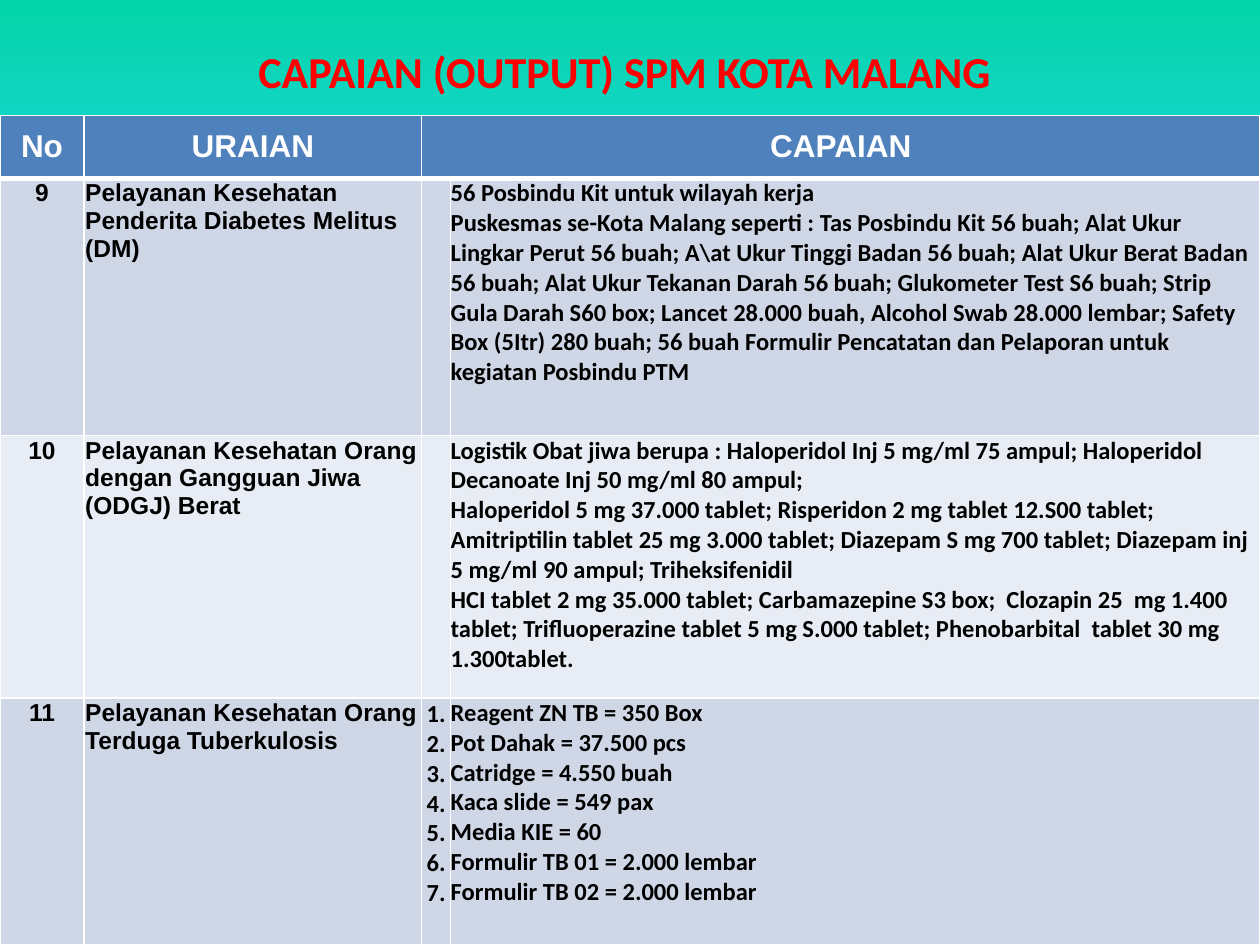
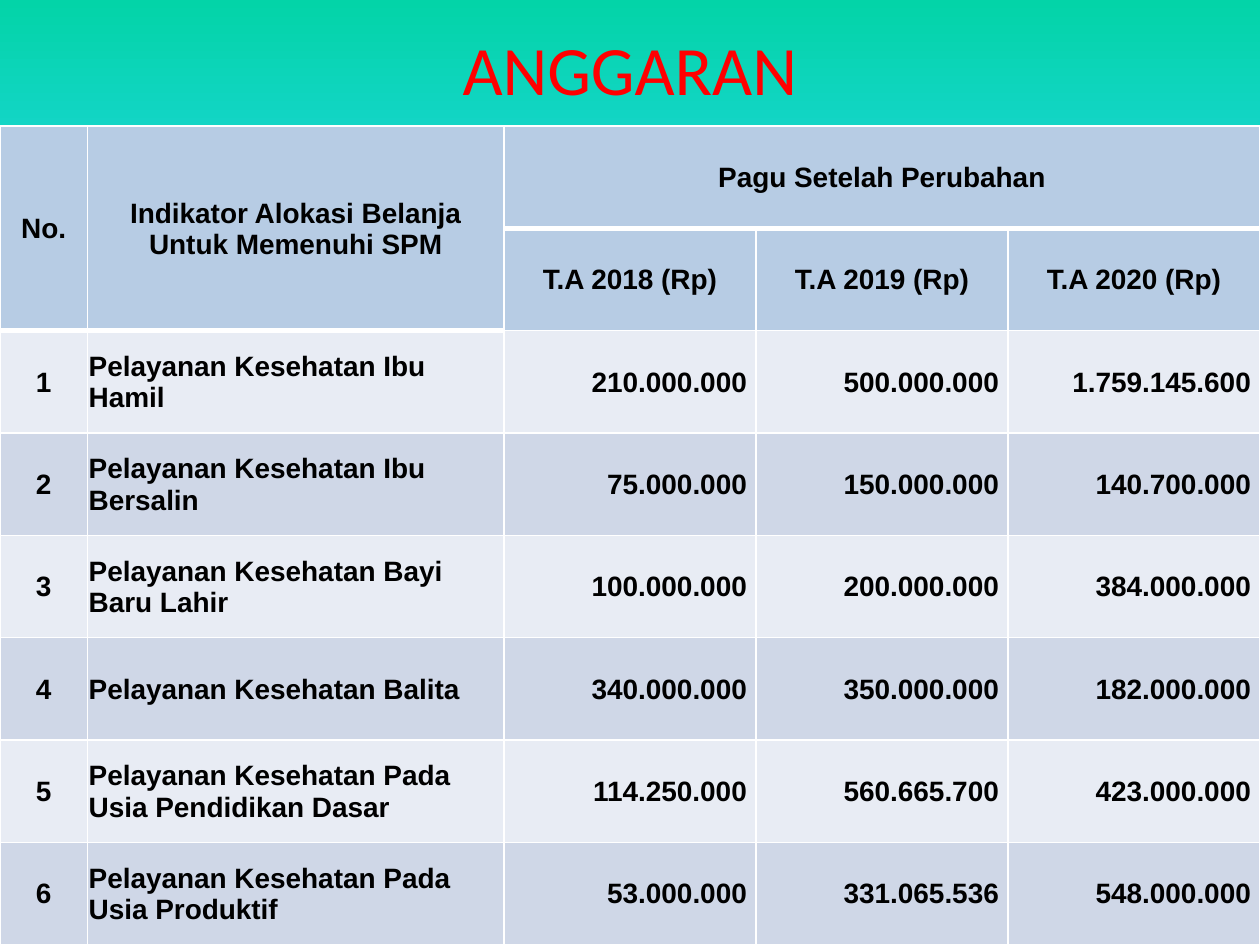
from dataclasses import dataclass

from lxml import etree
from pptx import Presentation
from pptx import util as u
from pptx.dml import color
from pptx.enum import text
from pptx.oxml import ns

Pt = u.Pt
LEFT, CENTER, RIGHT = text.PP_ALIGN.LEFT, text.PP_ALIGN.CENTER, text.PP_ALIGN.RIGHT
TOP, MIDDLE = text.MSO_ANCHOR.TOP, text.MSO_ANCHOR.MIDDLE


@dataclass(frozen=True)
class Theme:
    """Colours, fonts, sizes and line widths shared by the slides."""
    sky: tuple = ((0, "03D4A8"), (25, "21D6E0"), (75, "0087E6"), (100, "005CBF"))
    title: str = "FF0000"
    ink: str = "000000"
    white: str = "FFFFFF"
    head_blue: str = "4F81BD"
    head_pale: str = "B7CCE4"
    band_dark: str = "CFD7E7"
    band_light: str = "E8ECF4"
    sans: str = "Arial"
    body: str = "Calibri"
    output_title: float = 25.2
    budget_title: float = 39.6
    output_head: float = 18
    output_text: float = 14
    budget_text: float = 16
    thin: float = 1
    heavy: float = 3


@dataclass(frozen=True)
class CellStyle:
    """Look of the text in one kind of table cell."""
    size: float
    align: int = LEFT
    anchor: int = TOP
    font: str = Theme.sans
    ink: str = Theme.ink
    insets: tuple = (0.72, 0.72, 0.72, 0)


THEME = Theme()
WIDTH, HEIGHT = 720, 540

OUTPUT_HEAD = CellStyle(THEME.output_head, CENTER, MIDDLE, ink=THEME.white,
                        insets=(7.2, 3.6, 7.2, 3.6))
OUTPUT_NO = CellStyle(THEME.output_text, CENTER)
OUTPUT_NAME = CellStyle(THEME.output_text)
OUTPUT_MARK = CellStyle(THEME.output_text, CENTER, font=THEME.body)
OUTPUT_DETAIL = CellStyle(THEME.output_text, font=THEME.body, insets=(0, 0, 0, 0))
BUDGET_CENTER = CellStyle(THEME.budget_text, CENTER, MIDDLE)
BUDGET_NAME = CellStyle(THEME.budget_text, LEFT, MIDDLE)
BUDGET_AMOUNT = CellStyle(THEME.budget_text, RIGHT, MIDDLE, insets=(0.72, 0.72, 5.2, 0))

SUPPLIES = ["Reagent ZN TB = 350 Box", "Pot Dahak = 37.500 pcs", "Catridge = 4.550 buah",
            "Kaca slide = 549 pax", "Media KIE = 60", "Formulir TB 01 = 2.000 lembar",
            "Formulir TB 02 = 2.000 lembar"]
OUTPUTS = [
    ("9", "Pelayanan Kesehatan Penderita Diabetes Melitus (DM)", [],
     ["56 Posbindu Kit untuk wilayah kerja\n"
      "Puskesmas se-Kota Malang seperti : Tas Posbindu Kit 56 buah; Alat Ukur Lingkar Perut "
      "56 buah; A\\at Ukur Tinggi Badan 56 buah; Alat Ukur Berat Badan 56 buah; Alat Ukur "
      "Tekanan Darah 56 buah; Glukometer Test S6 buah; Strip Gula Darah S60 box; Lancet "
      "28.000 buah, Alcohol Swab 28.000 lembar; Safety Box (5Itr) 280 buah; 56 buah Formulir "
      "Pencatatan dan Pelaporan untuk kegiatan Posbindu PTM"]),
    ("10", "Pelayanan Kesehatan Orang dengan Gangguan Jiwa (ODGJ) Berat", [],
     ["Logistik Obat jiwa berupa : Haloperidol Inj 5 mg/ml 75 ampul; Haloperidol\n"
      "Decanoate Inj 50 mg/ml 80 ampul;\n"
      "Haloperidol 5 mg 37.000 tablet; Risperidon 2 mg tablet 12.S00 tablet; Amitriptilin "
      "tablet 25 mg 3.000 tablet; Diazepam S mg 700 tablet; Diazepam inj 5 mg/ml 90 ampul; "
      "Triheksifenidil\n"
      "HCI tablet 2 mg 35.000 tablet; Carbamazepine S3 box;  Clozapin 25  mg 1.400 tablet; "
      "Trifluoperazine tablet 5 mg S.000 tablet; Phenobarbital  tablet 30 mg 1.300tablet."]),
    ("11", "Pelayanan Kesehatan Orang Terduga Tuberkulosis",
     [f"{number}." for number in range(1, len(SUPPLIES) + 1)], SUPPLIES),
]
BUDGETS = [
    ("Ibu Hamil", "210.000.000", "500.000.000", "1.759.145.600"),
    ("Ibu Bersalin", "75.000.000", "150.000.000", "140.700.000"),
    ("Bayi Baru Lahir", "100.000.000", "200.000.000", "384.000.000"),
    ("Balita", "340.000.000", "350.000.000", "182.000.000"),
    ("Pada Usia Pendidikan Dasar", "114.250.000", "560.665.700", "423.000.000"),
    ("Pada Usia Produktif", "53.000.000", "331.065.536", "548.000.000"),
]


def rgb(code):
    """Turn a hex code into a colour."""
    return color.RGBColor.from_string(code)


def write_line(paragraph, line, font, size, ink, bold):
    """Write one paragraph, with a break at each newline."""
    for index, part in enumerate(line.split("\n")):
        if index:
            paragraph.add_line_break()
        run = paragraph.add_run()
        run.text = part
        run.font.name, run.font.size, run.font.bold = font, Pt(size), bold
        run.font.color.rgb = rgb(ink)


def add_sky(slide):
    """Fill the slide background with the vertical gradient."""
    fill = slide.background.fill
    fill.gradient()
    fill.gradient_angle = 270
    stops = next(slide.element.iter(ns.qn("a:gsLst")))
    for stop in list(stops):
        stops.remove(stop)
    for percent, code in THEME.sky:
        stop = etree.SubElement(stops, ns.qn("a:gs"), pos=str(percent * 1000))
        etree.SubElement(stop, ns.qn("a:srgbClr"), val=code)


def add_title(slide, box, wording, size, bold):
    """Centre the red title in its box."""
    frame = slide.shapes.add_textbox(*map(Pt, box)).text_frame
    frame.word_wrap = True
    frame.vertical_anchor = MIDDLE
    frame.paragraphs[0].alignment = CENTER
    write_line(frame.paragraphs[0], wording, THEME.body, size, THEME.title, bold)


def fill_cell(cell, lines, style):
    """Write bold lines into a table cell."""
    cell.vertical_anchor = style.anchor
    (cell.margin_left, cell.margin_top,
     cell.margin_right, cell.margin_bottom) = map(Pt, style.insets)
    for index, line in enumerate(lines):
        paragraph = cell.text_frame.add_paragraph() if index else cell.text_frame.paragraphs[0]
        paragraph.alignment = style.align
        write_line(paragraph, line, style.font, style.size, style.ink, True)


def add_borders(cell, top, bottom):
    """Draw the four white edges of a cell."""
    properties = cell._tc.get_or_add_tcPr()
    edges = (("L", THEME.thin), ("R", THEME.thin), ("T", top), ("B", bottom))
    for index, (side, width) in enumerate(edges):
        line = etree.Element(ns.qn(f"a:ln{side}"), w=str(int(Pt(width))))
        paint = etree.SubElement(line, ns.qn("a:solidFill"))
        etree.SubElement(paint, ns.qn("a:srgbClr"), val=THEME.white)
        properties.insert(index, line)


def add_grid(slide, box, widths, heights, fills, heavy_below):
    """Add a table with row fills and white rules, heavy below the given cells."""
    grid = slide.shapes.add_table(len(heights), len(widths), *map(Pt, box)).table
    grid.horz_banding = False
    for column, width in zip(grid.columns, widths):
        column.width = Pt(width)
    for r, (row, height, fill) in enumerate(zip(grid.rows, heights, fills)):
        row.height = Pt(height)
        for c, cell in enumerate(row.cells):
            cell.fill.solid()
            cell.fill.fore_color.rgb = rgb(fill)
            add_borders(cell, *(THEME.heavy if spot in heavy_below else THEME.thin
                                for spot in ((r - 1, c), (r, c))))
    return grid


def add_output_table(slide, box):
    """List the service outputs by number, name and result."""
    widths = [48, 193, 16.6, 462.4]
    fills = [THEME.head_blue, THEME.band_dark, THEME.band_light, THEME.band_dark]
    grid = add_grid(slide, box, widths, [36, 147, 150, 141], fills,
                    {(0, c) for c in range(len(widths))})
    grid.cell(0, 2).merge(grid.cell(0, 3))
    for c, heading in enumerate(("No", "URAIAN", "CAPAIAN")):
        fill_cell(grid.cell(0, c), [heading], OUTPUT_HEAD)
    for r, (number, name, marks, details) in enumerate(OUTPUTS, 1):
        fill_cell(grid.cell(r, 0), [number], OUTPUT_NO)
        fill_cell(grid.cell(r, 1), [name], OUTPUT_NAME)
        fill_cell(grid.cell(r, 2), marks, OUTPUT_MARK)
        fill_cell(grid.cell(r, 3), details, OUTPUT_DETAIL)


def add_budget_table(slide, box):
    """List the budget of each service for three years."""
    widths = [50, 238, 144, 144, 144]
    count = len(BUDGETS) + 2
    bands = [THEME.band_light, THEME.band_dark] * (len(BUDGETS) // 2)
    heavy_below = {(0, c) for c in range(len(widths))} | {(1, 0), (1, 1)}
    grid = add_grid(slide, box, widths, [box[3] / count] * count,
                    [THEME.head_pale] * 2 + bands, heavy_below)
    for start, end in (((0, 0), (1, 0)), ((0, 1), (1, 1)), ((0, 2), (0, 4))):
        grid.cell(*start).merge(grid.cell(*end))
    headings = ("No.", "Indikator Alokasi Belanja Untuk Memenuhi SPM", "Pagu Setelah Perubahan")
    for c, heading in enumerate(headings):
        fill_cell(grid.cell(0, c), [heading], BUDGET_CENTER)
    for c, year in enumerate((2018, 2019, 2020), 2):
        fill_cell(grid.cell(1, c), [f"T.A {year} (Rp)"], BUDGET_CENTER)
    for number, (service, *amounts) in enumerate(BUDGETS, 1):
        r = number + 1
        fill_cell(grid.cell(r, 0), [str(number)], BUDGET_CENTER)
        fill_cell(grid.cell(r, 1), [f"Pelayanan Kesehatan {service}"], BUDGET_NAME)
        for c, amount in enumerate(amounts, 2):
            fill_cell(grid.cell(r, c), [amount], BUDGET_AMOUNT)


def main():
    """Build and save the two slides."""
    deck = Presentation()
    deck.slide_width, deck.slide_height = Pt(WIDTH), Pt(HEIGHT)
    blank = deck.slide_layouts[6]

    outputs = deck.slides.add_slide(blank)
    add_sky(outputs)
    add_title(outputs, (12, 21.6, 690, 38), "CAPAIAN (OUTPUT) SPM KOTA MALANG",
              THEME.output_title, True)
    add_output_table(outputs, (0, 66, WIDTH, HEIGHT - 66))

    budget = deck.slides.add_slide(blank)
    add_sky(budget)
    add_title(budget, (18, 12, 684, 54), "ANGGARAN", THEME.budget_title, False)
    add_budget_table(budget, (0, 72, WIDTH, HEIGHT - 72))

    deck.save("out.pptx")


if __name__ == "__main__":
    main()
